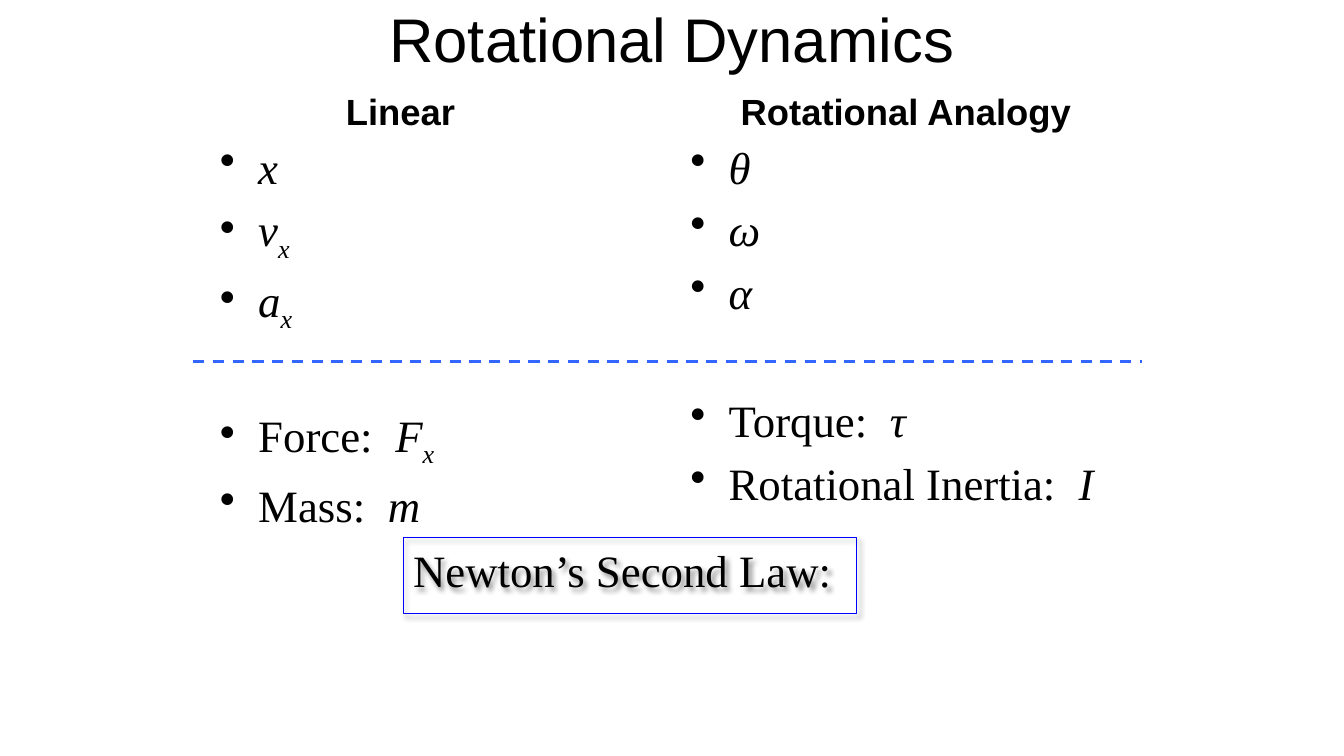
"""Build the Rotational Dynamics slide on a grid of 160 by 90 cells."""
from lxml import etree
from pptx import Presentation
from pptx import util as u
from pptx.dml.color import RGBColor
from pptx.enum import dml, shapes, text
from pptx.oxml import ns

BLACK = RGBColor(0, 0, 0)
BLUE = RGBColor(0, 0, 255)
DIVIDER_BLUE = RGBColor(0x33, 0x66, 0xFF)
SERIF, SANS = "Times New Roman", "Arial"
CELL = u.Inches(1 / 12)
SUBSCRIPT = "-25000"
GAP_BEFORE_DYNAMICS = u.Pt(53)


def add_child(parent, tag, **attributes):
    child = etree.SubElement(parent, ns.qn(tag))
    for name, value in attributes.items():
        child.set(name, str(value))
    return child


def add_span(para, wording, size=32, font=SERIF, bold=False, italic=False, baseline=None):
    span = para.add_run()
    span.text = wording
    span.font.size = u.Pt(size)
    span.font.name = font
    span.font.bold = bold
    span.font.italic = italic
    span.font.color.rgb = BLACK
    if baseline:
        span._r.get_or_add_rPr().set("baseline", baseline)


deck = Presentation()
deck.slide_width, deck.slide_height = CELL * 160, CELL * 90
page = deck.slides.add_slide(deck.slide_layouts[6])

title = page.shapes.add_textbox(CELL * 26, 0, CELL * 108, CELL * 9)
title.text_frame.word_wrap = True
title.text_frame.vertical_anchor = text.MSO_ANCHOR.MIDDLE
title_para = title.text_frame.paragraphs[0]
title_para.alignment = text.PP_ALIGN.CENTER
add_span(title_para, "Rotational Dynamics", size=44, font=SANS)

# Each row holds its plain label, its italic symbol and its subscript.
columns = [
    (25, 47, [("", "x", ""), ("", "v", "x"), ("", "a", "x"),
              ("Force:  ", "F", "x"), ("Mass:  ", "m", "")]),
    (81, 51, [("", "θ", ""), ("", "ω", ""), ("", "α", ""),
              ("Torque:  ", "τ", ""), ("Rotational Inertia:  ", "I", "")]),
]
for left, height, rows in columns:
    box = page.shapes.add_textbox(CELL * left, CELL * 16, CELL * 56, CELL * height)
    frame = box.text_frame
    frame.word_wrap = True
    for index, (label, symbol, subscript) in enumerate(rows):
        para = frame.add_paragraph() if index else frame.paragraphs[0]
        properties = para._p.get_or_add_pPr()
        properties.set("marL", str(u.Inches(0.38)))
        properties.set("indent", str(-u.Inches(0.38)))
        if index == 3:
            para.space_before = GAP_BEFORE_DYNAMICS
        else:
            add_child(add_child(properties, "a:spcBef"), "a:spcPct", val=20000)
        add_child(properties, "a:buChar", char="•")
        if label:
            add_span(para, label)
        add_span(para, symbol, italic=True)
        if subscript:
            add_span(para, subscript, italic=True, baseline=SUBSCRIPT)

for left, width, heading in [(40, 1.3, "Linear"), (87, 3.53, "Rotational Analogy")]:
    box = page.shapes.add_textbox(CELL * left, CELL * 10, u.Inches(width), u.Inches(0.54))
    box.text_frame.word_wrap = False
    add_span(box.text_frame.paragraphs[0], heading, size=26, font=SANS, bold=True)

divider = page.shapes.add_connector(
    shapes.MSO_CONNECTOR.STRAIGHT, CELL * 23, CELL * 43, CELL * 136, CELL * 43)
divider.line.color.rgb = DIVIDER_BLUE
divider.line.width = u.Pt(2)
divider.line.dash_style = dml.MSO_LINE.DASH
add_child(divider._element.spPr, "a:effectLst")

law = page.shapes.add_shape(
    shapes.MSO_SHAPE.RECTANGLE, CELL * 48, CELL * 64, CELL * 54, CELL * 9)
law.fill.background()
law.line.color.rgb = BLUE
law.line.width = u.Pt(0.75)
effects = add_child(law._element.spPr, "a:effectLst")
shadow = add_child(effects, "a:outerShdw", blurRad=u.Pt(4), dist=u.Pt(3),
                   dir=45 * 60000, algn="ctr", rotWithShape=0)
add_child(add_child(shadow, "a:srgbClr", val=BLACK), "a:alpha", val=43000)
law.text_frame.word_wrap = True
law.text_frame.vertical_anchor = text.MSO_ANCHOR.TOP
law_para = law.text_frame.paragraphs[0]
law_para.alignment = text.PP_ALIGN.LEFT
add_child(add_child(law_para._p.get_or_add_pPr(), "a:spcBef"), "a:spcPct", val=20000)
add_span(law_para, "Newton’s Second Law:")

deck.save("out.pptx")
